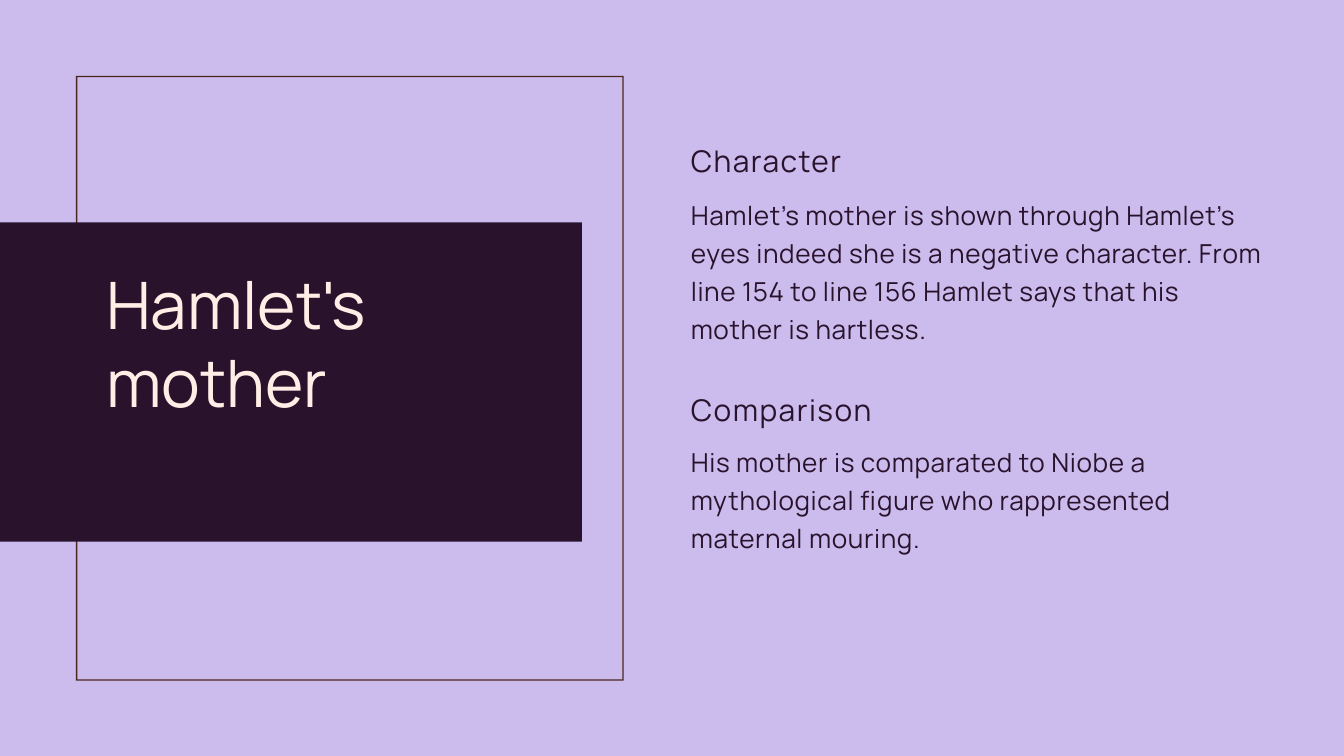
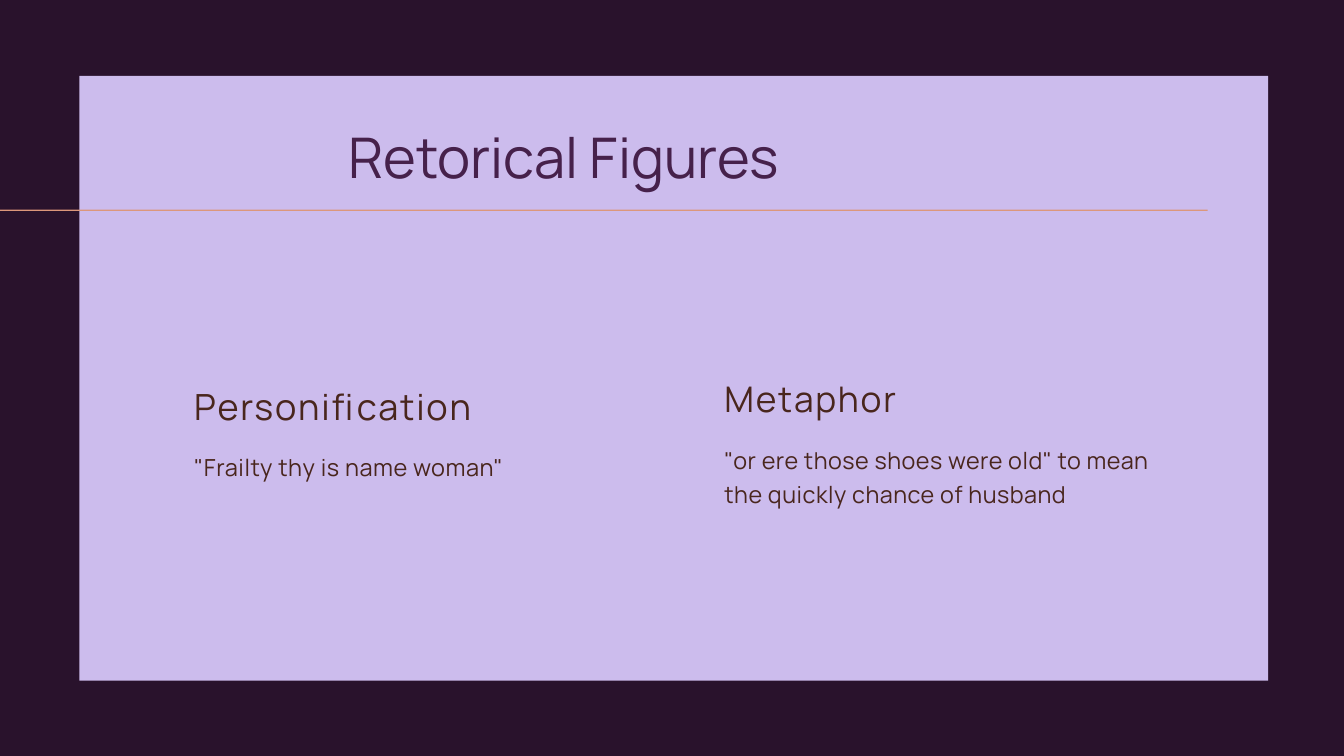
"""Build two slides on Hamlet's mother and the rhetorical figures around her."""
import pptx
import pptx.dml.color
import pptx.enum.shapes
import pptx.enum.text
import pptx.util

Inches = pptx.util.Inches
Pt = pptx.util.Pt
RGBColor = pptx.dml.color.RGBColor

LILAC = RGBColor(0xCC, 0xBC, 0xED)
PLUM = RGBColor(0x29, 0x12, 0x2C)
VIOLET = RGBColor(0x46, 0x21, 0x4B)
BROWN = RGBColor(0x49, 0x26, 0x1D)
CREAM = RGBColor(0xFF, 0xED, 0xE6)
COPPER = RGBColor(0xDC, 0x97, 0x7B)
FONT = "Manrope"
TITLE_ONLY = 5

MOTHER = {
    "background": LILAC,
    "title": (["Hamlet's", "mother"], (1.58, 3.93, 6.33, 2.33), (70.1, 84, 0), CREAM),
    "text_color": PLUM,
    "sections": [
        ("Character", (10.28, 2.1, 8.59, 0.56), (32, 40, 1.6)),
        ("Hamlet’s mother is shown through Hamlet’s eyes indeed she is a negative "
         "character. From line 154 to line 156 Hamlet says that his mother is hartless.",
         (10.28, 2.87, 8.59, 2.25), (28, 40.6, 0.7)),
        ("Comparison", (10.28, 5.8, 8.59, 0.56), (32, 40, 1.6)),
        ("His mother is comparated to Niobe a mythological figure who rappresented "
         "maternal mouring.", (10.28, 6.55, 8.59, 1.69), (28, 40.6, 0.7)),
    ],
}
FIGURES = {
    "background": PLUM,
    "title": (["Retorical Figures"], (5.18, 1.82, 12.79, 1), (60, 72, 0), VIOLET),
    "text_color": BROWN,
    "sections": [
        ("Personification", (2.89, 5.7, 7.12, 0.67), (38.6, 48.2, 1.9)),
        ('"Frailty thy is name woman"', (2.89, 6.66, 7.12, 0.51), (25.2, 36.6, 0.6)),
        ("Metaphor", (10.78, 5.59, 6.97, 0.66), (37.8, 47.2, 1.9)),
        ('"or ere those shoes were old" to mean the quickly chance of husband',
         (10.78, 6.55, 6.97, 1.01), (25, 36.3, 0.6)),
    ],
}
FRAME_BOX = (1.13, 1.13, 8.15, 9)
FRAME_WIDTH = 0.02
TITLE_BAND = (0, 3.31, 8.66, 4.75)
PANEL = (1.18, 1.13, 17.69, 9)
TITLE_RULE = (-0.49, 3.12, 18.46, 0.02)


def paint(shape, color):
    """Give a shape a plain fill without line or shadow."""
    shape.shadow.inherit = False
    shape.fill.solid()
    shape.fill.fore_color.rgb = color
    shape.line.fill.background()


def add_rectangle(slide, box, color):
    """Add a filled rectangle."""
    kind = pptx.enum.shapes.MSO_SHAPE.RECTANGLE
    paint(slide.shapes.add_shape(kind, *map(Inches, box)), color)


def add_frame(slide, box, width, color):
    """Add a hollow rectangular frame as one outline with a hole."""
    left, top, right, bottom = box[0], box[1], box[0] + box[2], box[1] + box[3]
    outer = [(left, top), (left, bottom), (right, bottom), (right, top)]
    left, top, right, bottom = left + width, top + width, right - width, bottom - width
    inner = [(right, bottom), (left, bottom), (left, top), (right, top)]
    builder = slide.shapes.build_freeform(
        Inches(outer[0][0]), Inches(outer[0][1]), scale=1.0)
    for index, contour in enumerate((outer, inner)):
        points = [(Inches(x), Inches(y)) for x, y in contour]
        if index:
            builder.move_to(*points[0])
        builder.add_line_segments(points[1:], close=True)
    paint(builder.convert_to_shape(), color)


def write(shape, lines, style, color):
    """Fill a shape with one left-aligned paragraph per line."""
    size, line_spacing, tracking = style
    frame = shape.text_frame
    frame.word_wrap = True
    frame.auto_size = pptx.enum.text.MSO_AUTO_SIZE.NONE
    frame.vertical_anchor = pptx.enum.text.MSO_ANCHOR.TOP
    frame.margin_left = frame.margin_top = frame.margin_right = frame.margin_bottom = 0
    for index, line in enumerate(lines):
        paragraph = frame.add_paragraph() if index else frame.paragraphs[0]
        paragraph.alignment = pptx.enum.text.PP_ALIGN.LEFT
        paragraph.line_spacing = Pt(line_spacing)
        paragraph.space_before = Pt(0)
        run = paragraph.add_run()
        run.text = line
        run.font.name = FONT
        run.font.size = Pt(size)
        run.font.color.rgb = color
        if tracking:
            run._r.get_or_add_rPr().set("spc", str(round(tracking * 100)))


def start_slide(presentation, content):
    """Add a title-only slide with its background colour."""
    slide = presentation.slides.add_slide(presentation.slide_layouts[TITLE_ONLY])
    slide.background.fill.solid()
    slide.background.fill.fore_color.rgb = content["background"]
    return slide


def add_texts(slide, content):
    """Place the title above the decoration, then the sections."""
    lines, box, style, color = content["title"]
    title = slide.shapes.title
    title.left, title.top, title.width, title.height = map(Inches, box)
    title.element.getparent().append(title.element)
    write(title, lines, style, color)
    for text, box, style in content["sections"]:
        write(slide.shapes.add_textbox(*map(Inches, box)), [text], style,
              content["text_color"])


def main():
    """Build and save the presentation."""
    presentation = pptx.Presentation()
    presentation.slide_width = Inches(20)
    presentation.slide_height = Inches(11.25)

    slide = start_slide(presentation, MOTHER)
    add_frame(slide, FRAME_BOX, FRAME_WIDTH, BROWN)
    add_rectangle(slide, TITLE_BAND, PLUM)
    add_texts(slide, MOTHER)

    slide = start_slide(presentation, FIGURES)
    add_rectangle(slide, PANEL, LILAC)
    add_rectangle(slide, TITLE_RULE, COPPER)
    add_texts(slide, FIGURES)

    presentation.save("out.pptx")


if __name__ == "__main__":
    main()
